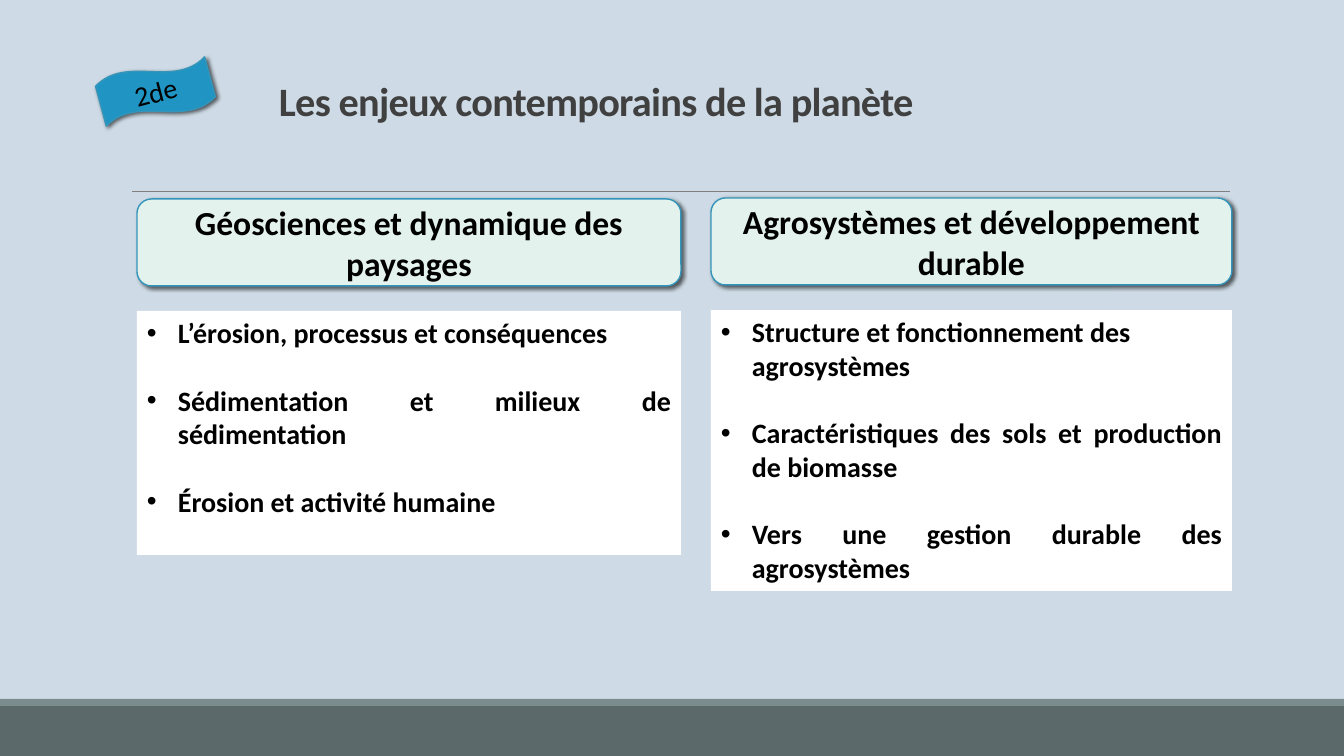
from lxml import etree
from pptx import Presentation
from pptx.dml.color import RGBColor
from pptx.enum.shapes import MSO_CONNECTOR, MSO_SHAPE
from pptx.enum.text import MSO_ANCHOR, PP_ALIGN
from pptx.oxml.ns import qn
from pptx.util import Emu, Pt

RECT, ROUNDED, WAVE = MSO_SHAPE.RECTANGLE, MSO_SHAPE.ROUNDED_RECTANGLE, MSO_SHAPE.WAVE
LEFT, CENTER, JUSTIFY = PP_ALIGN.LEFT, PP_ALIGN.CENTER, PP_ALIGN.JUSTIFY
TOP, MIDDLE, BOTTOM = MSO_ANCHOR.TOP, MSO_ANCHOR.MIDDLE, MSO_ANCHOR.BOTTOM

TITLE = "Les enjeux contemporains de la planète"
LEVEL = "2de"
THEMES = [
    {"heading": "Géosciences et dynamique des paysages",
     "left": 137, "top": 199, "width": 544, "list_height": 244,
     "topics": [("L’érosion, processus et conséquences", JUSTIFY),
                ("Sédimentation et milieux de sédimentation", JUSTIFY),
                ("Érosion et activité humaine", JUSTIFY)]},
    {"heading": "Agrosystèmes et développement durable",
     "left": 711, "top": 198, "width": 521, "list_height": 281,
     "topics": [("Structure et fonctionnement des agrosystèmes", LEFT),
                ("Caractéristiques des sols et production de biomasse", JUSTIFY),
                ("Vers une gestion durable des agrosystèmes", JUSTIFY)]},
]
COLORS = {"background": "CEDBE6", "footer": "5B696B", "footer_edge": "7A8C8E",
          "rule": "808080", "title": "404040", "heading": "E3F2ED",
          "accent": "3494BA", "ribbon": "2094C2", "panel": "FFFFFF", "text": "000000"}
FONT = "Calibri"
WIDTH, HEIGHT = 1344, 756
FOOTER_TOP, FOOTER_EDGE = 706, 7
HEADING_HEIGHT, LIST_OFFSET = 87, 112
BULLET_INDENT = 31


def px(length):
    return Emu(round(length * 12192000 / WIDTH))


def color(key):
    return RGBColor.from_string(COLORS[key])


def add_block(kind, left, top, width, height, fill, outline=None):
    block = slide.shapes.add_shape(kind, px(left), px(top), px(width), px(height))
    block.shadow.inherit = False
    block.fill.solid()
    block.fill.fore_color.rgb = color(fill)
    if outline:
        block.line.color.rgb = color(outline)
        block.line.width = Pt(1)
    else:
        block.line.fill.background()
    return block


def cast_shadow(block):
    """Give the block a soft shadow towards the lower right."""
    effects = block._element.spPr.find(qn("a:effectLst"))
    shadow = etree.SubElement(effects, qn("a:outerShdw"), blurRad=str(Pt(3)),
                              dist=str(Pt(2)), dir="2700000", rotWithShape="0")
    black = etree.SubElement(shadow, qn("a:srgbClr"), val=COLORS["text"])
    etree.SubElement(black, qn("a:alpha"), val="60000")


def write(block, lines, size, anchor, bold=True, ink="text"):
    """Fill the block with (text, alignment) lines and return the paragraphs."""
    frame = block.text_frame
    frame.word_wrap = True
    frame.vertical_anchor = anchor
    for number, (text, alignment) in enumerate(lines):
        paragraph = frame.add_paragraph() if number else frame.paragraphs[0]
        paragraph.text = text
        paragraph.alignment = alignment
        paragraph.font.name = FONT
        paragraph.font.size = Pt(size)
        paragraph.font.bold = bold
        paragraph.font.color.rgb = color(ink)
    return frame.paragraphs


def add_bullet(paragraph):
    properties = paragraph._p.get_or_add_pPr()
    properties.set("marL", str(px(BULLET_INDENT)))
    properties.set("indent", str(-px(BULLET_INDENT)))
    bullet_font = etree.Element(qn("a:buFont"), typeface="Arial")
    bullet = etree.Element(qn("a:buChar"), char="•")
    properties.find(qn("a:defRPr")).addprevious(bullet_font)
    bullet_font.addnext(bullet)


def add_theme(theme):
    left, top, width = theme["left"], theme["top"], theme["width"]
    heading = add_block(ROUNDED, left, top, width, HEADING_HEIGHT, "heading", "accent")
    cast_shadow(heading)
    write(heading, [(theme["heading"], CENTER)], 24, MIDDLE)

    panel = add_block(RECT, left, top + LIST_OFFSET, width, theme["list_height"], "panel")
    for number, topic in enumerate(write(panel, theme["topics"], 20, TOP)):
        if number:
            topic.space_before = Pt(24)
        add_bullet(topic)


prs = Presentation()
prs.slide_width, prs.slide_height = px(WIDTH), px(HEIGHT)
slide = prs.slides.add_slide(prs.slide_layouts[6])
slide.background.fill.solid()
slide.background.fill.fore_color.rgb = color("background")

add_block(RECT, 0, FOOTER_TOP, WIDTH, HEIGHT - FOOTER_TOP, "footer")
add_block(RECT, 0, FOOTER_TOP - FOOTER_EDGE, WIDTH, FOOTER_EDGE, "footer_edge")
rule = slide.shapes.add_connector(MSO_CONNECTOR.STRAIGHT, px(132), px(191), px(1230), px(191))
rule.line.color.rgb = color("rule")
rule.line.width = Pt(0.5)
etree.SubElement(rule._element.spPr, qn("a:effectLst"))

title_box = slide.shapes.add_textbox(px(269), px(43), px(862), px(87))
title = write(title_box, [(TITLE, LEFT)], 28.8, BOTTOM, ink="title")[0]
title.line_spacing = 0.85
title.runs[0].font._element.set("spc", "-50")

for theme in THEMES:
    add_theme(theme)

ribbon = add_block(WAVE, 99, 64, 113, 55, "ribbon", "accent")
ribbon.rotation = 344.9
cast_shadow(ribbon)
write(ribbon, [(LEVEL, CENTER)], 20, MIDDLE, bold=False)

prs.save("out.pptx")
